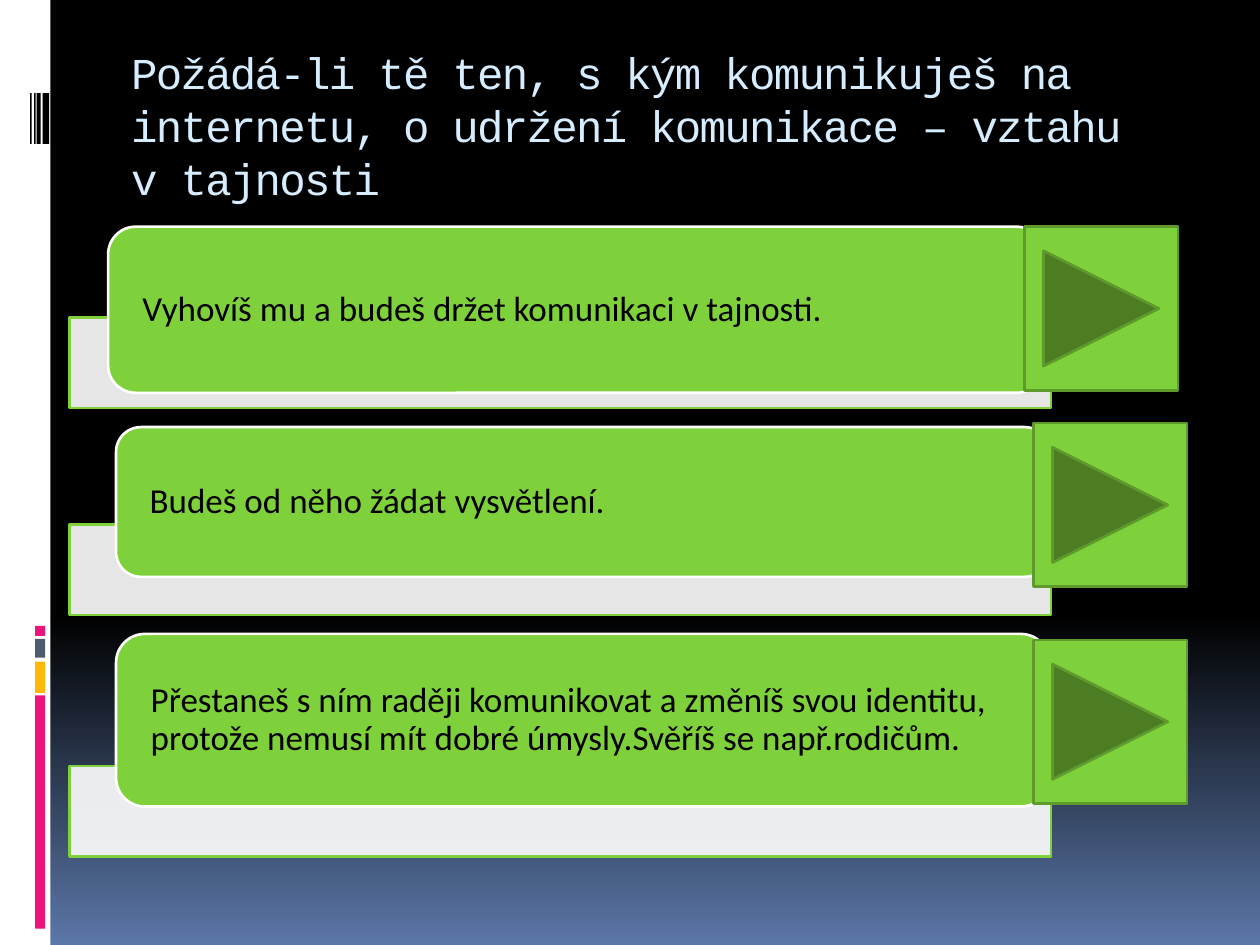
from pptx import Presentation
from pptx.dml.color import RGBColor
from pptx.enum.shapes import MSO_SHAPE
from pptx.enum.text import MSO_ANCHOR, MSO_AUTO_SIZE, PP_ALIGN
from pptx.oxml.ns import qn
from pptx.util import Cm, Pt
from lxml import etree

RECT = MSO_SHAPE.RECTANGLE
ROUND = MSO_SHAPE.ROUNDED_RECTANGLE
NEXT = MSO_SHAPE.ACTION_BUTTON_FORWARD_OR_NEXT
LEFT = PP_ALIGN.LEFT
TOP, MIDDLE = MSO_ANCHOR.TOP, MSO_ANCHOR.MIDDLE
FIXED = MSO_AUTO_SIZE.NONE

GREEN, WHITE, BLACK, PINK = "7FD13B", "FFFFFF", "000000", "EA157A"

TITLE = ("Požádá-li tě ten, s\u00a0kým komunikuješ na internetu, "
         "o udržení komunikace – vztahu v\u00a0tajnosti")
CHOICES = [
    ("Vyhovíš mu a budeš držet komunikaci v tajnosti.",
     6.4, (2.18, 4.57, 18.87, 3.35), (20.65, 4.57)),
    ("Budeš od něho žádat vysvětlení.",
     10.57, (2.34, 8.61, 18.82, 3.02), (20.83, 8.53)),
    ("Přestaneš s\u00a0ním raději komunikovat a změníš svou identitu, "
     "protože nemusí mít dobré úmysly.Svěříš se např.rodičům.",
     15.44, (2.34, 12.78, 18.82, 3.48), (20.83, 12.9)),
]
BLOCKS = [(14.02, 4.7, PINK), (13.34, 0.63, "FEB80A"),
          (12.88, 0.38, "4E5B6F"), (12.62, 0.2, PINK)]
STRIPES = [(0.86, 0.13), (0.74, 0.08), (0.69, 0.03), (0.61, 0.03)]


def color(code):
    return RGBColor.from_string(code)


def draw(slide, kind, box, fill, line=None):
    shape = slide.shapes.add_shape(kind, *map(Cm, box))
    shape.shadow.inherit = False
    shape.fill.solid()
    shape.fill.fore_color.rgb = color(fill)
    if line:
        shape.line.color.rgb = color(line)
        shape.line.width = Pt(1.5)
    else:
        shape.line.fill.background()
    return shape


def write(shape, text, font, size, code, anchor):
    frame = shape.text_frame
    frame.text = text
    frame.word_wrap = True
    frame.auto_size = FIXED
    frame.vertical_anchor = anchor
    para = frame.paragraphs[0]
    para.alignment = LEFT
    run = para.runs[0]
    run.font.name = font
    run.font.size = Pt(size)
    run.font.color.rgb = color(code)
    return frame, para, run


def paint(slide):
    fill = slide.background.fill
    fill.gradient()
    fill.gradient_angle = 270
    for stop, (place, code) in zip(fill.gradient_stops,
                                   [(0.65, BLACK), (1, "5B77A8")]):
        stop.position = place
        stop.color.rgb = color(code)


def trim(slide):
    draw(slide, RECT, (0, 0, 1.02, 19.05), WHITE)
    for top, high, code in BLOCKS:
        draw(slide, RECT, (0.71, top, 0.2, high), code)
    for left, wide in STRIPES:
        draw(slide, RECT, (left, 1.88, wide, 1.02), BLACK)


def head(slide):
    title = slide.shapes.title
    title.left, title.top, title.width, title.height = map(
        Cm, (2.39, 0.79, 21.74, 3.18))
    frame, para, run = write(title, TITLE, "Courier New", 25.2, "D6ECFF", TOP)
    para.line_spacing = 1.0
    run.font.bold = False
    run.font._element.set("spc", "-100")


def choose(slide):
    for text, top, box, spot in CHOICES:
        ledge = draw(slide, RECT, (1.4, top, 19.79, 1.83), WHITE, GREEN)
        tint = ledge.fill._xPr.find(qn("a:solidFill"))[0]
        etree.SubElement(tint, qn("a:alpha"), val="90000")
        card = draw(slide, ROUND, box, GREEN, WHITE)
        frame, para, run = write(card, text, "Calibri", 20, BLACK, MIDDLE)
        frame.margin_left = frame.margin_right = Cm(0.53)
        frame.margin_top = frame.margin_bottom = 0
        para.line_spacing = 0.9
    for text, top, box, spot in CHOICES:
        draw(slide, NEXT, (*spot, 3.1, 3.3), GREEN, "5E9B2C")


def main():
    deck = Presentation()
    deck.slide_width, deck.slide_height = Cm(25.4), Cm(19.05)
    slide = deck.slides.add_slide(deck.slide_layouts[5])
    paint(slide)
    trim(slide)
    head(slide)
    choose(slide)
    deck.save("out.pptx")


if __name__ == "__main__":
    main()
